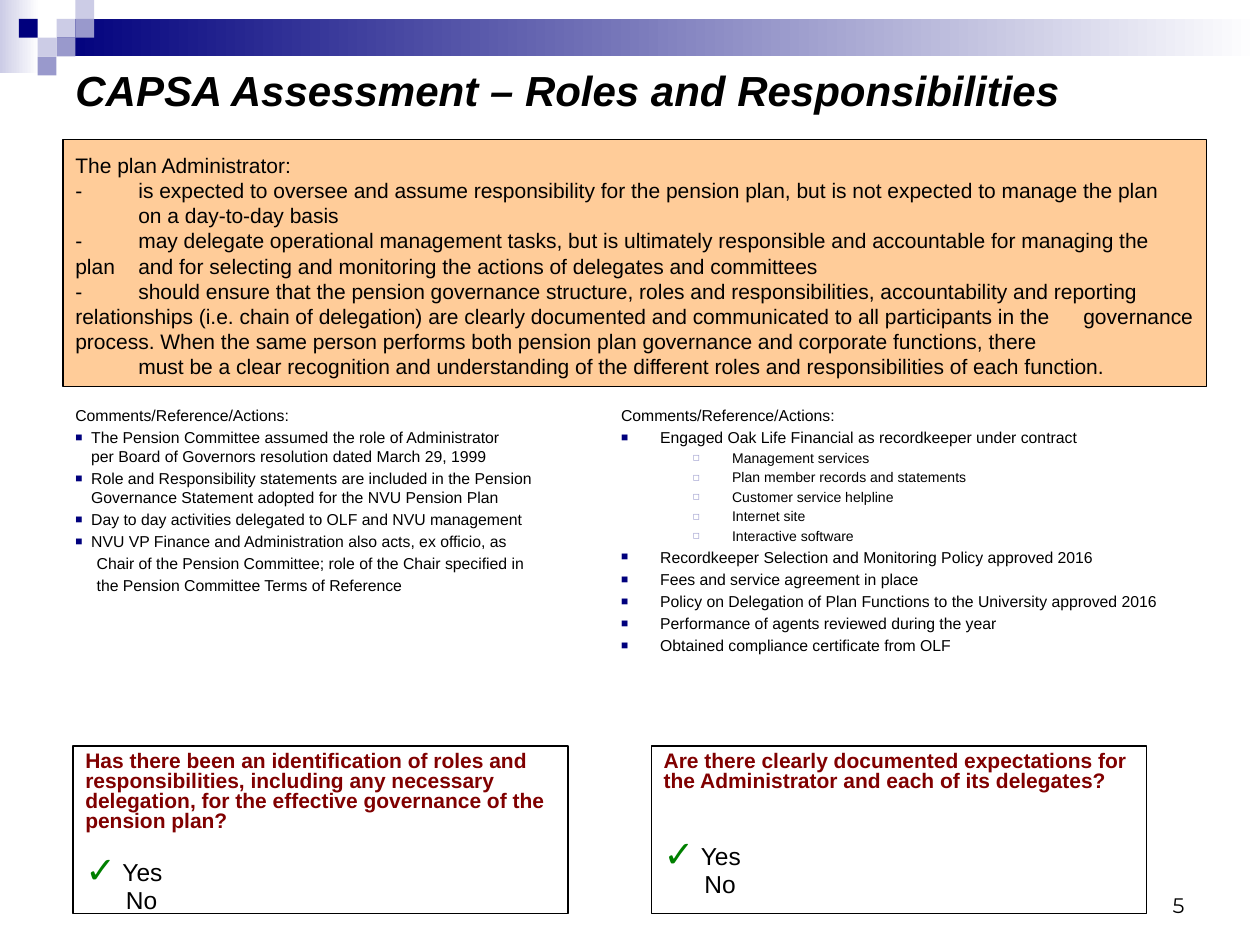
"""Build the governance slide on roles and responsibilities."""
from lxml.etree import SubElement
from pptx import Presentation
from pptx.dml.color import RGBColor as Rgb
from pptx.enum.shapes import MSO_SHAPE as Shape
from pptx.enum.text import MSO_ANCHOR as Anchor, PP_ALIGN as Align
from pptx.oxml.ns import qn
from pptx.util import Cm, Pt

BLACK = Rgb(0x00, 0x00, 0x00)
WHITE = Rgb(0xFF, 0xFF, 0xFF)
NAVY = Rgb(0x00, 0x00, 0x7D)
LILAC = Rgb(0xCC, 0xCC, 0xE6)
VIOLET = Rgb(0x99, 0x99, 0xCC)
PEACH = Rgb(0xFF, 0xCC, 0x99)
MAROON = Rgb(0x80, 0x00, 0x00)
GREEN = Rgb(0x00, 0x80, 0x00)

TITLE = "CAPSA Assessment – Roles and Responsibilities"
PAGE_NUMBER = "5"
DUTIES = [
    "The plan Administrator:",
    "-\tis expected to oversee and assume responsibility for the pension plan, "
    "but is not expected to manage the plan\n\ton a day-to-day basis",
    "-\tmay delegate operational management tasks, but is ultimately responsible and "
    "accountable for managing the plan \tand for selecting and monitoring the actions "
    "of delegates and committees",
    "-\tshould ensure that the pension governance structure, roles and responsibilities, "
    "accountability and reporting \trelationships (i.e. chain of delegation) are clearly "
    "documented and communicated to all participants in the \tgovernance process. When the "
    "same person performs both pension plan governance and corporate functions, there",
    "\tmust be a clear recognition and understanding of the different roles and "
    "responsibilities of each function.",
]
HEADING = "Comments/Reference/Actions:"
LEFT_NOTES = [
    ("heading", HEADING),
    ("note", "The Pension Committee assumed the role of Administrator\n"
             "per Board of Governors resolution dated March 29, 1999"),
    ("note", "Role and Responsibility statements are included in the Pension\n"
             "Governance Statement adopted for the NVU Pension Plan"),
    ("note", "Day to day activities delegated to OLF and NVU management"),
    ("note", "NVU VP Finance and Administration also acts, ex officio, as"),
    ("more", "Chair of the Pension Committee; role of the Chair specified in"),
    ("more", "the Pension Committee Terms of Reference"),
]
RIGHT_NOTES = [
    ("heading", HEADING),
    ("item", "Engaged Oak Life Financial as recordkeeper under contract"),
    ("service", "Management services"),
    ("service", "Plan member records and statements"),
    ("service", "Customer service helpline"),
    ("service", "Internet site"),
    ("service", "Interactive software"),
    ("item", "Recordkeeper Selection and Monitoring Policy approved 2016"),
    ("item", "Fees and service agreement in place"),
    ("item", "Policy on Delegation of Plan Functions to the University approved 2016"),
    ("item", "Performance of agents reviewed during the year"),
    ("item", "Obtained compliance certificate from OLF"),
]
QUESTIONS = [
    (1.47, 16.8, "Has there been an identification of roles and responsibilities, including "
                 "any necessary delegation, for the effective governance of the pension plan?"),
    (13.13, 30.7, "Are there clearly documented expectations for the Administrator "
                  "and each of its delegates?"),
]
SQUARE_BULLET = ("■", NAVY, 75)
STYLES = {
    "heading": {"size": 9},
    "note": {"size": 9, "margin": 0.32, "hang": 0.32, "bullet": SQUARE_BULLET},
    "more": {"size": 9, "margin": 0.43},
    "item": {"size": 9, "margin": 0.79, "hang": 0.79, "bullet": SQUARE_BULLET},
    "service": {"size": 8, "margin": 2.24, "hang": 0.79, "bullet": ("◻", VIOLET, 80)},
    "question": {"size": 12, "color": MAROON, "bold": True, "spacing": 0.8},
    "yes": {"size": 14, "margin": 0.75, "hang": 0.75, "spacing": 0.8,
            "bullet": ("✓", GREEN, 150)},
    "no": {"size": 14, "margin": 0.82, "spacing": 0.8},
    "duty": {"size": 12, "before": 0, "tabs": (0.8, 20.1)},
    "title": {"size": 24, "bold": True, "italic": True},
    "number": {"size": 12, "name": "Montserrat", "align": Align.RIGHT},
}
SQUARE = 0.38
SQUARES = [(3, 1, LILAC), (4, 0, LILAC), (4, 1, VIOLET), (2, 2, LILAC),
           (1, 1, NAVY), (3, 2, VIOLET), (2, 3, VIOLET)]
GRADIENTS = [((0, 0, 0.79, 1.48), LILAC), ((1.14, SQUARE, 24.26, 0.76), NAVY)]


def apply(target, values):
    """Set each named attribute on the target."""
    for name, value in values.items():
        setattr(target, name, value)


def add_box(page, place, fill=None, line=None):
    """Add a rectangle with an optional fill and outline."""
    box = page.shapes.add_shape(Shape.RECTANGLE, *map(Cm, place))
    box.shadow.inherit = False
    if fill is None:
        box.fill.background()
    else:
        box.fill.solid()
        box.fill.fore_color.rgb = fill
    if line is None:
        box.line.fill.background()
    else:
        box.line.color.rgb = line
        box.line.width = Pt(0.75)
    return box


def add_gradient(page, place, color):
    """Add a bar fading from a colour to white."""
    box = add_box(page, place, color)
    box.fill.gradient()
    box.fill.gradient_angle = 0
    for stop, shade, position in zip(box.fill.gradient_stops, (color, WHITE), (0, 1)):
        stop.color.rgb = shade
        stop.position = position


def add_text(page, place):
    """Add an empty text box."""
    return page.shapes.add_textbox(*map(Cm, place))


def format_para(para, style, before):
    """Apply spacing, indents, bullet, tabs and font to a paragraph."""
    apply(para, {"alignment": style.get("align", Align.LEFT),
                 "line_spacing": style.get("spacing", 1.0),
                 "space_before": Pt(before)})
    props = para._p.get_or_add_pPr()
    props.set("marL", str(Cm(style.get("margin", 0))))
    props.set("indent", str(-Cm(style.get("hang", 0))))
    if "bullet" in style:
        mark, color, percent = style["bullet"]
        SubElement(SubElement(props, qn("a:buClr")), qn("a:srgbClr"), val=str(color))
        SubElement(props, qn("a:buSzPct"), val=str(percent * 1000))
        SubElement(props, qn("a:buFont"), typeface="Arial")
        SubElement(props, qn("a:buChar"), char=mark)
    if "tabs" in style:
        stops = SubElement(props, qn("a:tabLst"))
        for stop in style["tabs"]:
            SubElement(stops, qn("a:tab"), pos=str(Cm(stop)), algn="l")
    for span in para.runs:
        apply(span.font, {"name": style.get("name", "Arial"), "size": Pt(style["size"]),
                          "bold": style.get("bold", False),
                          "italic": style.get("italic", False)})
        span.font.color.rgb = style.get("color", BLACK)


def write(box, rows, anchor=Anchor.TOP, gaps=None, **frame_values):
    """Fill a box with styled paragraphs."""
    frame = box.text_frame
    apply(frame, {"word_wrap": True, "vertical_anchor": anchor, **frame_values})
    for index, (kind, text) in enumerate(rows):
        para = frame.paragraphs[0] if index == 0 else frame.add_paragraph()
        para.text = text
        style = STYLES[kind]
        before = style.get("before", style["size"] * 0.2) if index else 0
        format_para(para, style, (gaps or {}).get(kind, before))


def main():
    """Create and save the deck."""
    deck = Presentation()
    apply(deck, {"slide_width": Cm(25.4), "slide_height": Cm(19.05)})
    page = deck.slides.add_slide(deck.slide_layouts[6])
    for place, color in GRADIENTS:
        add_gradient(page, place, color)
    for column, row, color in SQUARES:
        add_box(page, (column * SQUARE, row * SQUARE, SQUARE, SQUARE), color)
    write(add_text(page, (18.21, 17.35, 5.92, 1.27)), [("number", PAGE_NUMBER)], Anchor.BOTTOM)
    write(add_text(page, (1.27, 1.27, 22.86, 1.07)), [("title", TITLE)], Anchor.MIDDLE)
    write(add_text(page, (1.27, 8.05, 11.43, 5.51)), LEFT_NOTES)
    write(add_text(page, (12.27, 8.05, 13.13, 5.92)), RIGHT_NOTES)
    write(add_box(page, (1.27, 2.82, 23.06, 4.98), PEACH, BLACK),
          [("duty", text) for text in DUTIES], margin_top=Cm(0.25))
    for left, gap, question in QUESTIONS:
        write(add_box(page, (left, 15.04, 9.98, 3.38), line=BLACK),
              [("question", question), ("yes", "Yes"), ("no", "No")], gaps={"yes": gap})
    deck.save("out.pptx")


if __name__ == "__main__":
    main()
